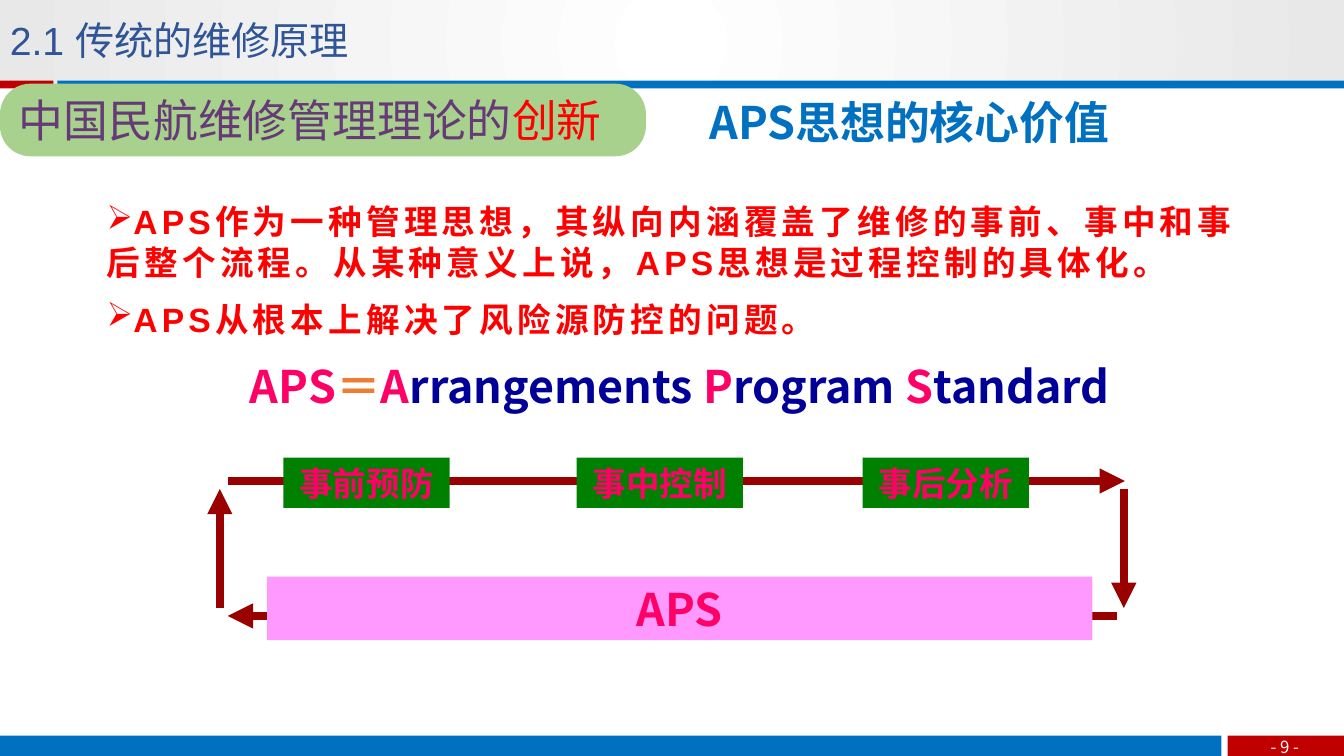
import pptx
import pptx.util
import pptx.dml.color
import pptx.enum.shapes
import pptx.enum.text
import pptx.oxml.ns
from lxml import etree

Cm = pptx.util.Cm
Pt = pptx.util.Pt
RGBColor = pptx.dml.color.RGBColor
SHAPE = pptx.enum.shapes.MSO_SHAPE
ALIGN = pptx.enum.text.PP_ALIGN
ANCHOR = pptx.enum.text.MSO_ANCHOR
qn = pptx.oxml.ns.qn

WHITE = RGBColor(0xFF, 0xFF, 0xFF)
SILVER = RGBColor(0xE8, 0xE8, 0xE8)
BLUE = RGBColor(0x00, 0x70, 0xC0)
CRIMSON = RGBColor(0xC0, 0x00, 0x00)
RED = RGBColor(0xFF, 0x00, 0x00)
PINK = RGBColor(0xFF, 0x00, 0x66)
ORANGE = RGBColor(0xED, 0x7D, 0x31)
NAVY = RGBColor(0x00, 0x00, 0x99)
MAROON = RGBColor(0x99, 0x00, 0x00)
GREEN = RGBColor(0x00, 0x80, 0x00)
ORCHID = RGBColor(0xFF, 0x99, 0xFF)
STEEL = RGBColor(0x2F, 0x55, 0x97)
SAGE = RGBColor(0xA9, 0xD1, 0x8E)
PURPLE = RGBColor(0x66, 0x3A, 0x77)

CJK = "Noto Sans CJK SC"
LATIN = "Arial"


class SlideBuilder:
    def __init__(self, page, line_color, line_width):
        self.page = page
        self.line_color = line_color
        self.line_width = line_width

    def shape(self, left, top, width, height, color, kind=SHAPE.RECTANGLE):
        shape = self.page.shapes.add_shape(kind, Cm(left), Cm(top), Cm(width), Cm(height))
        shape.shadow.inherit = False
        shape.fill.solid()
        shape.fill.fore_color.rgb = color
        shape.line.fill.background()
        return shape

    def radial_banner(self, left, top, width, height, inner, outer):
        banner = self.shape(left, top, width, height, inner)
        banner.fill.gradient()
        for stop, color, position in zip(banner.fill.gradient_stops, (inner, outer), (0, 1)):
            stop.color.rgb = color
            stop.position = position
        gradient = banner.element.spPr.find(qn("a:gradFill"))
        gradient.remove(gradient.find(qn("a:lin")))
        circle = etree.SubElement(gradient, qn("a:path"), {"path": "circle"})
        etree.SubElement(circle, qn("a:fillToRect"), l="50000", t="50000", r="50000", b="50000")

    def text_box(self, left, top, width, height, wrap=True):
        box = self.page.shapes.add_textbox(Cm(left), Cm(top), Cm(width), Cm(height))
        box.text_frame.word_wrap = wrap
        return box

    def put_text(self, shape, parts, size, font=CJK, bold=False, align=ALIGN.LEFT, anchor=ANCHOR.TOP):
        shape.text_frame.vertical_anchor = anchor
        para = shape.text_frame.paragraphs[0]
        para.alignment = align
        for text, color in parts:
            self.span(para, text, size, color, font, bold)
        return para

    def span(self, para, text, size, color, font, bold, spacing=0):
        span = para.add_run()
        span.text = text
        span.font.size = Pt(size)
        span.font.bold = bold
        span.font.color.rgb = color
        span.font.name = font
        properties = span._r.get_or_add_rPr()
        etree.SubElement(properties, qn("a:ea"), typeface=CJK)
        if spacing:
            properties.set("spc", str(spacing * 100))

    def bullets(self, box, texts, size, color, font, mark, gap, spacing):
        frame = box.text_frame
        for index, text in enumerate(texts):
            para = frame.add_paragraph() if index else frame.paragraphs[0]
            etree.SubElement(para._p.get_or_add_pPr(), qn("a:buChar"), char=mark)
            if index:
                para.space_before = Pt(gap)
            self.span(para, text, size, color, font, True, spacing)

    def label(self, left, top, width, height, fill, text, size, color):
        label = self.shape(left, top, width, height, fill)
        self.put_text(label, [(text, color)], size, bold=True, align=ALIGN.CENTER, anchor=ANCHOR.MIDDLE)

    def arrow(self, start, end):
        arrow = self.page.shapes.add_connector(
            pptx.enum.shapes.MSO_CONNECTOR.STRAIGHT, *map(Cm, start + end))
        arrow.line.color.rgb = self.line_color
        arrow.line.width = Pt(self.line_width)
        properties = arrow._element.spPr
        etree.SubElement(properties.find(qn("a:ln")), qn("a:tailEnd"), type="triangle")
        etree.SubElement(properties, qn("a:effectLst"))


def main():
    deck = pptx.Presentation()
    deck.slide_width, deck.slide_height = Cm(33.87), Cm(19.05)
    page = deck.slides.add_slide(deck.slide_layouts[6])
    slide = SlideBuilder(page, MAROON, 6)

    slide.radial_banner(-0.05, 0, 33.92, 2.11, WHITE, SILVER)
    slide.shape(1.45, 2.03, 32.42, 0.2, BLUE)
    slide.shape(0, 2.03, 1.35, 0.2, CRIMSON)
    slide.shape(0, 18.54, 30.78, 0.51, BLUE)
    slide.shape(30.94, 18.54, 2.93, 0.51, CRIMSON)
    number = slide.text_box(31.39, 18.44, 1.98, 0.76, wrap=False)
    slide.put_text(number, [("- 9 -", WHITE)], 12, align=ALIGN.CENTER, anchor=ANCHOR.MIDDLE)

    body = slide.text_box(2.44, 4.95, 29.39, 5.05)
    slide.bullets(body, [
        "APS作为一种管理思想，其纵向内涵覆盖了维修的事前、事中和事后整个流程。"
        "从某种意义上说，APS思想是过程控制的具体化。",
        "APS从根本上解决了风险源防控的问题。",
    ], 24, RED, LATIN, "➢", gap=12, spacing=3)

    formula = slide.text_box(6.05, 9.07, 24.05, 3.18)
    para = slide.put_text(formula, [
        ("APS", PINK), ("＝", ORANGE),
        ("A", PINK), ("rrangements ", NAVY),
        ("P", PINK), ("rogram ", NAVY),
        ("S", PINK), ("tandard", NAVY),
    ], 32, bold=True)
    para.line_spacing = 0.9

    core_value = slide.text_box(17.63, 2.26, 10.8, 1.63)
    slide.put_text(core_value, [("APS思想的核心价值", BLUE)], 32, bold=True)

    slide.arrow((5.74, 12.12), (28.35, 12.12))
    for left, stage in ((7.14, "事前预防"), (14.53, "事中控制"), (21.74, "事后分析")):
        slide.label(left, 11.53, 4.19, 1.27, GREEN, stage, 24, PINK)
    slide.arrow((5.54, 15.32), (5.54, 12.32))
    slide.arrow((28.32, 12.32), (28.32, 15.32))
    slide.arrow((28.14, 15.52), (5.74, 15.52))
    slide.label(6.73, 14.53, 20.8, 1.6, ORCHID, "APS", 32, PINK)

    heading = slide.text_box(0, 0.28, 9.4, 1.45, wrap=False)
    slide.put_text(heading, [("2.1 传统的维修原理", STEEL)], 28, LATIN)

    topic = slide.shape(0, 2.11, 16.28, 1.83, SAGE, SHAPE.ROUNDED_RECTANGLE)
    topic.adjustments[0] = 0.42
    slide.put_text(topic, [("中国民航维修管理理论的", PURPLE), ("创新", RED)], 32, LATIN, anchor=ANCHOR.MIDDLE)

    deck.save("out.pptx")


if __name__ == "__main__":
    main()
